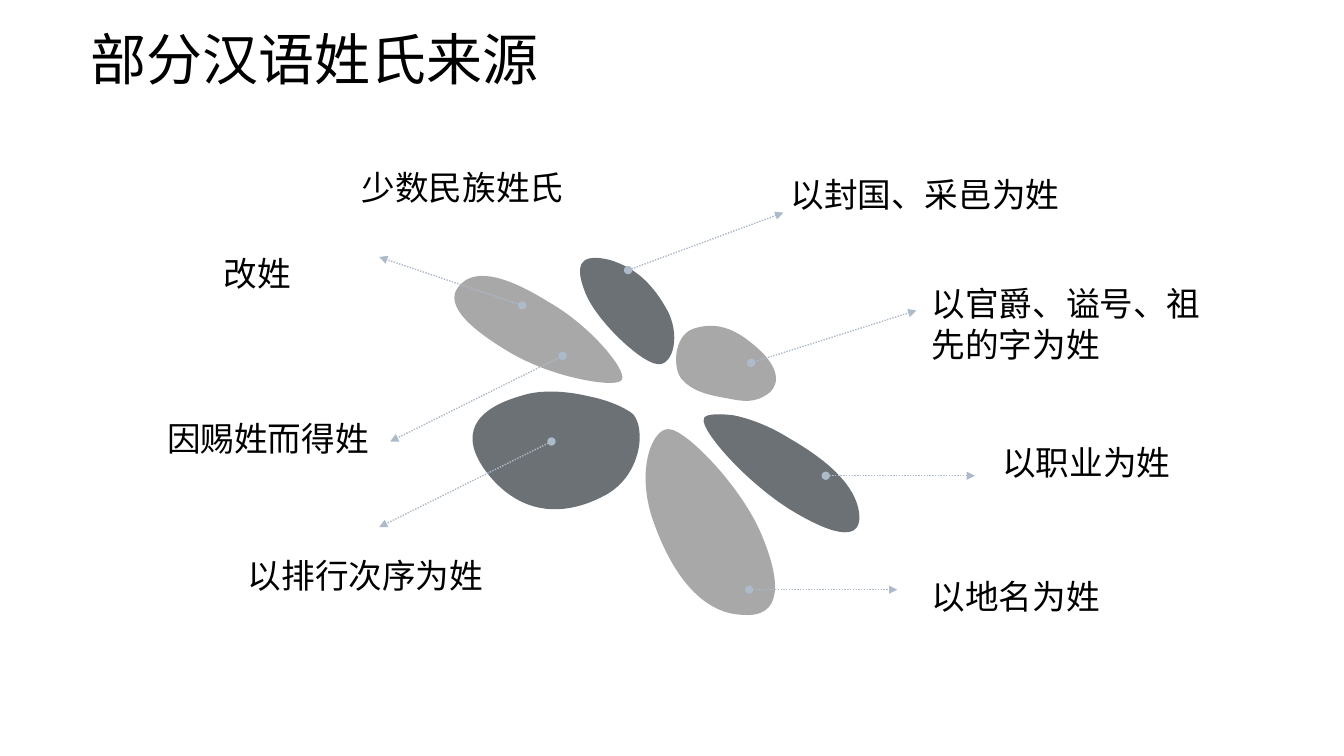
from dataclasses import dataclass

from lxml.etree import SubElement
from pptx import Presentation
from pptx.dml.color import RGBColor
from pptx.enum.dml import MSO_LINE
from pptx.enum.text import MSO_AUTO_SIZE, PP_ALIGN
from pptx.oxml.ns import qn
from pptx.util import Inches, Pt


@dataclass(frozen=True)
class Theme:
    font: str = "Noto Sans CJK SC"
    title_size: int = 40
    label_size: int = 24
    ink: RGBColor = RGBColor(0, 0, 0)
    light: RGBColor = RGBColor(0xA8, 0xA8, 0xA8)
    dark: RGBColor = RGBColor(0x6C, 0x71, 0x76)
    pointer: RGBColor = RGBColor(0xAD, 0xBA, 0xCA)


THEME = Theme()

PETALS = [
    (THEME.light, [
        (6.65, 4.26), (6.49, 4.22), (6.31, 4.61), (6.46, 5.11),
        (6.65, 5.69), (6.96, 6.09), (7.37, 6.1),
        (7.75, 6.13), (7.77, 5.79), (7.53, 5.25),
        (7.31, 4.78), (6.81, 4.28), (6.65, 4.26)]),
    (THEME.dark, [
        (6.98, 4.16), (6.95, 4.27), (7.4, 4.79), (7.86, 5.07),
        (8.31, 5.34), (8.56, 5.36), (8.52, 5.08),
        (8.48, 4.82), (8.23, 4.58), (7.83, 4.35),
        (7.64, 4.23), (7.43, 4.15), (7.27, 4.12),
        (7.1, 4.1), (6.98, 4.11), (6.98, 4.16)]),
    (THEME.dark, [
        (6.51, 3.61), (6.65, 3.65), (6.76, 3.38), (6.63, 3.1),
        (6.48, 2.82), (6.31, 2.66), (6.05, 2.58),
        (5.77, 2.51), (5.69, 2.61), (5.8, 2.89),
        (5.9, 3.17), (6.35, 3.59), (6.51, 3.61)]),
    (THEME.light, [
        (6.17, 3.76), (6.21, 3.67), (5.86, 3.23), (5.43, 2.99),
        (5.03, 2.74), (4.72, 2.66), (4.57, 2.82),
        (4.39, 2.99), (4.6, 3.23), (5.08, 3.51),
        (5.33, 3.65), (5.59, 3.73), (5.8, 3.77),
        (6.01, 3.81), (6.16, 3.81), (6.17, 3.76)]),
    (THEME.light, [
        (6.77, 3.77), (6.86, 3.87), (6.99, 3.91), (7.15, 3.94),
        (7.32, 3.97), (7.44, 4.01), (7.58, 3.93),
        (7.73, 3.85), (7.76, 3.68), (7.52, 3.46),
        (7.29, 3.25), (7.1, 3.19), (6.88, 3.26),
        (6.67, 3.33), (6.67, 3.68), (6.77, 3.77)]),
    (THEME.dark, [
        (6.28, 4.11), (6.21, 4.05), (6.04, 3.97), (5.83, 3.93),
        (5.62, 3.88), (5.36, 3.86), (5.16, 3.93),
        (4.71, 4.06), (4.54, 4.31), (4.83, 4.69),
        (5.15, 5.1), (5.57, 5.14), (5.99, 4.92),
        (6.36, 4.73), (6.41, 4.26), (6.28, 4.11)]),
]

POINTERS = [
    (7.45, 3.6, 9.09, 3.08),
    (6.23, 2.68, 7.77, 2.11),
    (5.18, 3.03, 3.76, 2.55),
    (5.47, 4.38, 3.76, 5.23),
    (7.43, 5.85, 8.9, 5.85),
    (8.19, 4.72, 9.67, 4.72),
    (5.58, 3.53, 3.87, 4.38),
]

RIGHT_LABELS = [
    ("以封国、采邑为姓", 7.84, 1.73, 3.02, 0.4),
    ("以官爵、谥号、祖先的字为姓", 9.24, 2.81, 2.81, 0.81),
    ("以地名为姓", 9.24, 5.71, 1.92, 0.4),
    ("以职业为姓", 9.94, 4.38, 2.31, 0.4),
]

LEFT_LABELS = [
    ("以排行次序为姓", 2.36, 5.46, 2.53, 0.5),
    ("因赐姓而得姓", 1.56, 4.1, 2.2, 0.5),
    ("改姓", 2.12, 2.46, 0.87, 0.5),
    ("少数民族姓氏", 3.49, 1.61, 2.2, 0.5),
]


def add_text(page, text, left, top, width, height, size=THEME.label_size,
             wrap=True, inset=True, align=None):
    box = page.shapes.add_textbox(Inches(left), Inches(top), Inches(width), Inches(height))
    frame = box.text_frame
    frame.word_wrap = wrap
    frame.auto_size = MSO_AUTO_SIZE.SHAPE_TO_FIT_TEXT
    if not inset:
        frame.margin_left = frame.margin_right = 0
        frame.margin_top = frame.margin_bottom = 0
    frame.text = text
    para = frame.paragraphs[0]
    para.alignment = align
    font = para.runs[0].font
    font.size = Pt(size)
    font.color.rgb = THEME.ink
    font.name = THEME.font
    SubElement(para.runs[0].font._element, qn("a:ea"), typeface=THEME.font)


def add_petal(page, color, points):
    start, *rest = [(Inches(x), Inches(y)) for x, y in points]
    builder = page.shapes.build_freeform(*start)
    builder.add_line_segments(rest, close=True)
    petal = builder.convert_to_shape()
    petal.shadow.inherit = False
    petal.fill.solid()
    petal.fill.fore_color.rgb = color
    petal.line.fill.background()
    segments = list(petal._element.iter(qn("a:lnTo")))
    for index in range(0, len(segments), 3):
        curve = segments[index]
        curve.tag = qn("a:cubicBezTo")
        for segment in segments[index + 1:index + 3]:
            curve.append(segment[0])
            segment.getparent().remove(segment)


def add_pointer(page, *ends):
    pointer = page.shapes.add_connector(1, *[Inches(value) for value in ends])
    pointer.line.color.rgb = THEME.pointer
    pointer.line.width = Pt(1)
    pointer.line.dash_style = MSO_LINE.ROUND_DOT
    outline = pointer.line._get_or_add_ln()
    SubElement(outline, qn("a:headEnd"), type="oval")
    SubElement(outline, qn("a:tailEnd"), type="triangle")
    SubElement(pointer._element.spPr, qn("a:effectLst"))


def main():
    deck = Presentation()
    deck.slide_width = Inches(13.33)
    deck.slide_height = Inches(7.5)
    page = deck.slides.add_slide(deck.slide_layouts[6])
    add_text(page, "部分汉语姓氏来源", 0.8, 0.19, 4.89, 0.77,
             size=THEME.title_size, align=PP_ALIGN.JUSTIFY)
    for color, points in PETALS:
        add_petal(page, color, points)
    for ends in POINTERS:
        add_pointer(page, *ends)
    for label in RIGHT_LABELS:
        add_text(page, *label, inset=False)
    for label in LEFT_LABELS:
        add_text(page, *label, wrap=False)
    deck.save("out.pptx")


if __name__ == "__main__":
    main()
